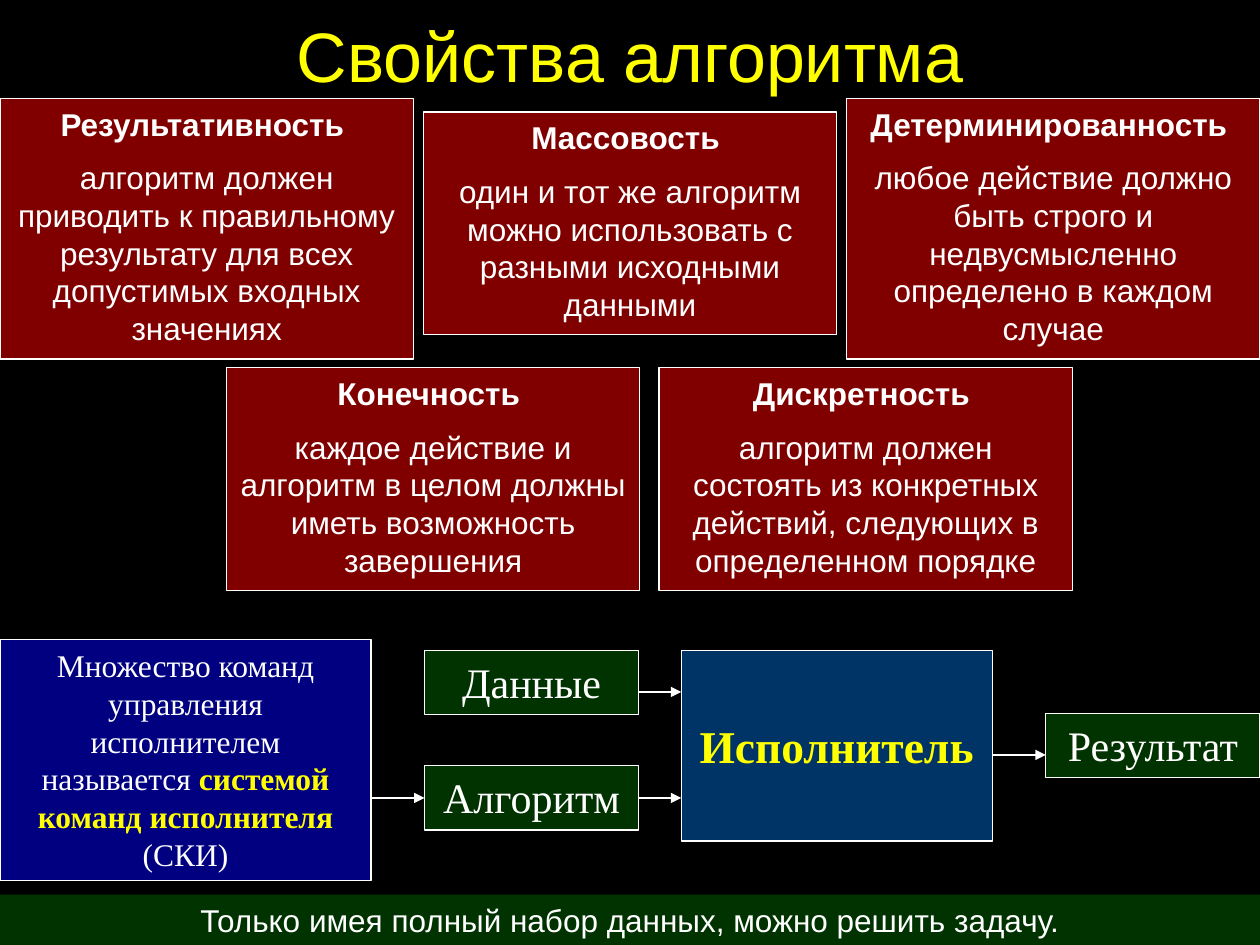
from lxml import etree
from pptx import Presentation
from pptx import util as u
from pptx.dml import color
from pptx.enum import shapes, text
from pptx.oxml import ns

Pt = u.Pt
COLORS = {
    "background": "000000", "accent": "FFFF00", "text": "FFFFFF",
    "property": "800000", "commands": "000080", "green": "003300",
    "performer": "003366",
}
SANS, SERIF = "Arial", "Times New Roman"
WIDTH, HEIGHT = 720, 540

TOP_PROPERTIES = [
    ("Результативность ", "алгоритм должен приводить к правильному результату "
     "для всех допустимых входных значениях", 0, 149),
    ("Массовость ", "один и тот же алгоритм можно использовать с разными "
     "исходными данными", 7.8, 127.4),
    ("Детерминированность ", "любое действие должно быть строго и недвусмысленно "
     "определено в каждом случае", 0, 149),
]
BOTTOM_PROPERTIES = [
    ("Конечность ", "каждое действие и алгоритм в целом должны иметь "
     "возможность завершения", 0, 127.4),
    ("Дискретность ", "алгоритм должен состоять из конкретных действий, "
     "следующих в определенном порядке", 0, 127.4),
]


def rgb(name):
    return color.RGBColor.from_string(COLORS[name])


def add_run(paragraph, content, size, font, ink="text", bold=False):
    run = paragraph.add_run()
    run.text = content
    run.font.size = Pt(size)
    run.font.name = font
    run.font.bold = bold
    run.font.color.rgb = rgb(ink)


def add_box(slide, box, fill, paragraphs, size, font, outlined=True, anchor="TOP"):
    shape = slide.shapes.add_shape(
        shapes.MSO_SHAPE.RECTANGLE, *[Pt(value) for value in box])
    shape.shadow.inherit = False
    shape.fill.solid()
    shape.fill.fore_color.rgb = rgb(fill)
    if outlined:
        shape.line.color.rgb = rgb("text")
        shape.line.width = Pt(0.75)
    else:
        shape.line.fill.background()
    frame = shape.text_frame
    frame.word_wrap = True
    frame.vertical_anchor = text.MSO_ANCHOR[anchor]
    for index, runs in enumerate(paragraphs):
        paragraph = frame.add_paragraph() if index else frame.paragraphs[0]
        paragraph.alignment = text.PP_ALIGN.CENTER
        paragraph.line_spacing = Pt(size * 1.2)
        paragraph.space_before = Pt(size / 2 if index else 0)
        for content, ink, bold in runs:
            add_run(paragraph, content, size, font, ink, bold)
    return shape


def add_arrow(slide, start, end, y):
    arrow = slide.shapes.add_connector(
        shapes.MSO_CONNECTOR.STRAIGHT, Pt(start), Pt(y), Pt(end), Pt(y))
    arrow.line.color.rgb = rgb("text")
    arrow.line.width = Pt(0.75)
    line = arrow.line._get_or_add_ln()
    etree.SubElement(line, ns.qn("a:tailEnd"), type="triangle")
    etree.SubElement(arrow._element.spPr, ns.qn("a:effectLst"))
    return arrow


def add_title(slide, box):
    title = slide.shapes.title
    title.left, title.top, title.width, title.height = [Pt(value) for value in box]
    frame = title.text_frame
    frame.word_wrap = True
    frame.vertical_anchor = text.MSO_ANCHOR.MIDDLE
    paragraph = frame.paragraphs[0]
    paragraph.alignment = text.PP_ALIGN.CENTER
    add_run(paragraph, "Свойства алгоритма", 40, SANS, "accent")


def add_properties(slide, box, properties):
    left, top, width, height = box
    card_width = 236.2
    step = (width - card_width) / (len(properties) - 1)
    for index, (name, description, drop, card_height) in enumerate(properties):
        paragraphs = [[(name, "text", True)], [(description, "text", False)]]
        card = (left + index * step, top + drop, card_width, card_height)
        add_box(slide, card, "property", paragraphs, 18, SANS)


def add_scheme(slide, box):
    left, top, width, height = box
    label_width, label_height = 122.4, 36.8
    commands_right = left + 212
    input_left = left + 242.6
    input_right = input_left + label_width
    performer_left, performer_width = left + 389.3, 177.8
    result_left = left + width - label_width
    upper = top + 6

    commands = [("Множество команд управления исполнителем называется ", "text", False),
                ("системой команд исполнителя ", "accent", True),
                ("(СКИ)", "text", False)]
    add_box(slide, (left, top, commands_right - left, height),
            "commands", [commands], 18, SERIF)

    labels = {}
    for label, x, y in [("Данные", input_left, upper),
                        ("Алгоритм", input_left, upper + 66),
                        ("Результат", result_left, upper + 36)]:
        labels[label] = add_box(slide, (x, y, label_width, label_height), "green",
                                [[(label, "text", False)]], 24, SERIF)
    add_box(slide, (performer_left, upper, performer_width, 109), "performer",
            [[("Исполнитель", "accent", True)]], 26, SERIF, anchor="MIDDLE")

    algorithm = labels["Алгоритм"]
    algorithm_middle = upper + 66 + label_height / 2
    to_algorithm = add_arrow(slide, commands_right, input_left, algorithm_middle)
    to_algorithm.end_connect(algorithm, 1)
    from_algorithm = add_arrow(slide, input_right, performer_left, algorithm_middle)
    from_algorithm.begin_connect(algorithm, 3)
    add_arrow(slide, input_right, performer_left, upper + 23.8)
    add_arrow(slide, performer_left + performer_width, result_left, upper + 59.8)


def add_conclusion(slide, box):
    sentence = "Только имея полный набор данных, можно решить задачу."
    add_box(slide, box, "green", [[(sentence, "text", False)]], 18, SANS,
            outlined=False)


def main():
    presentation = Presentation()
    presentation.slide_width, presentation.slide_height = Pt(WIDTH), Pt(HEIGHT)
    slide = presentation.slides.add_slide(presentation.slide_layouts[5])
    slide.background.fill.solid()
    slide.background.fill.fore_color.rgb = rgb("background")
    add_title(slide, (0, 0, WIDTH, 62))
    add_scheme(slide, (0, 365.6, WIDTH, 137.6))
    add_conclusion(slide, (0, 511.2, WIDTH, 28.8))
    add_properties(slide, (0, 56.2, WIDTH, 149), TOP_PROPERTIES)
    add_properties(slide, (129.4, 210.2, 483.4, 127.4), BOTTOM_PROPERTIES)
    presentation.save("out.pptx")


if __name__ == "__main__":
    main()
